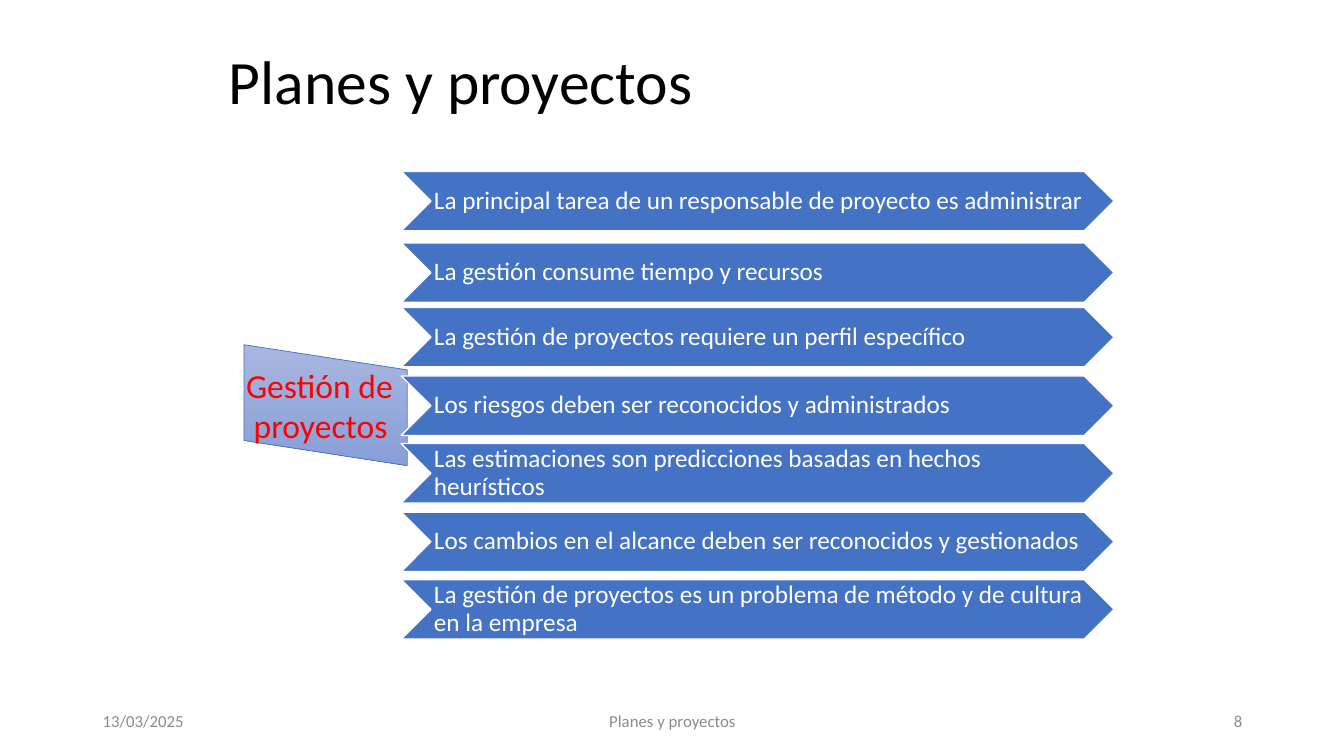
from pptx import Presentation
from pptx.dml.color import RGBColor
from pptx.enum.shapes import MSO_SHAPE
from pptx.enum.text import MSO_ANCHOR, PP_ALIGN
from pptx.util import Inches, Pt

COLORS = {
    "title": "000000", "footer": "8C8C8C", "label": "FF0000",
    "blue": "4472C4", "white": "FFFFFF",
    "grad_top": "A8B7DF", "grad_bottom": "889ED7",
}


def rgb(name):
    return RGBColor.from_string(COLORS[name])


def write(s, text, size, color, align=PP_ALIGN.LEFT, spacing=None):
    tf = s.text_frame
    tf.word_wrap = True
    tf.vertical_anchor = MSO_ANCHOR.MIDDLE
    tf.text = text
    for p in tf.paragraphs:
        p.alignment = align
        p.line_spacing = spacing
        p.font.name = "Calibri"
        p.font.size = Pt(size)
        p.font.color.rgb = rgb(color)
    return tf


prs = Presentation()
prs.slide_width, prs.slide_height = Inches(13.33), Inches(7.5)
slide = prs.slides.add_slide(prs.slide_layouts[5])

# Title
title = slide.shapes.title
title.left, title.top = Inches(2.17), Inches(0.21)
title.width, title.height = Inches(9), Inches(1.25)
write(title, "Planes y proyectos", 44, "title", spacing=0.9)

# Footer: date, name, slide number
footers = [
    (0.92, 3, "13/03/2025", PP_ALIGN.LEFT),
    (4.42, 4.5, "Planes y proyectos", PP_ALIGN.CENTER),
    (9.42, 3, "8", PP_ALIGN.RIGHT),
]
for left, width, text, align in footers:
    s = slide.shapes.add_textbox(Inches(left), Inches(6.95), Inches(width), Inches(0.4))
    write(s, text, 12, "footer", align)

# Slanted label
fb = slide.shapes.build_freeform(Inches(2.42), Inches(3.42))
corners = [(4.04, 3.67), (4.04, 4.62), (2.42, 4.37)]
fb.add_line_segments([(Inches(x), Inches(y)) for x, y in corners])
label = fb.convert_to_shape()
label.shadow.inherit = False
label.fill.gradient()
label.fill.gradient_angle = 270
for stop, name in zip(label.fill.gradient_stops, ("grad_top", "grad_bottom")):
    stop.color.rgb = rgb(name)
label.line.color.rgb = rgb("blue")
label.line.width = Pt(0.5)
tf = write(label, "Gestión de\n proyectos", 24, "label")
tf.margin_left, tf.margin_right = Inches(0.02), 0

# Chevrons
ideas = [
    (1.7, "La principal tarea de un responsable de proyecto es administrar"),
    (2.41, "La gestión consume tiempo y recursos"),
    (3.05, "La gestión de proyectos requiere un perfil específico"),
    (3.73, "Los riesgos deben ser reconocidos y administrados"),
    (4.4, "Las estimaciones son predicciones basadas en hechos heurísticos"),
    (5.08, "Los cambios en el alcance deben ser reconocidos y gestionados"),
    (5.75, "La gestión de proyectos es un problema de método y de cultura en la empresa"),
]
for top, text in ideas:
    s = slide.shapes.add_shape(MSO_SHAPE.CHEVRON, Inches(3.98), Inches(top),
                               Inches(7.07), Inches(0.59))
    s.shadow.inherit = False
    s.fill.solid()
    s.fill.fore_color.rgb = rgb("blue")
    s.line.color.rgb = rgb("white")
    s.line.width = Pt(1)
    tf = write(s, text, 18, "white", spacing=0.9)
    tf.margin_left, tf.margin_right = Inches(0.03), 0
    tf.margin_top = tf.margin_bottom = Inches(0.01)

prs.save("out.pptx")
